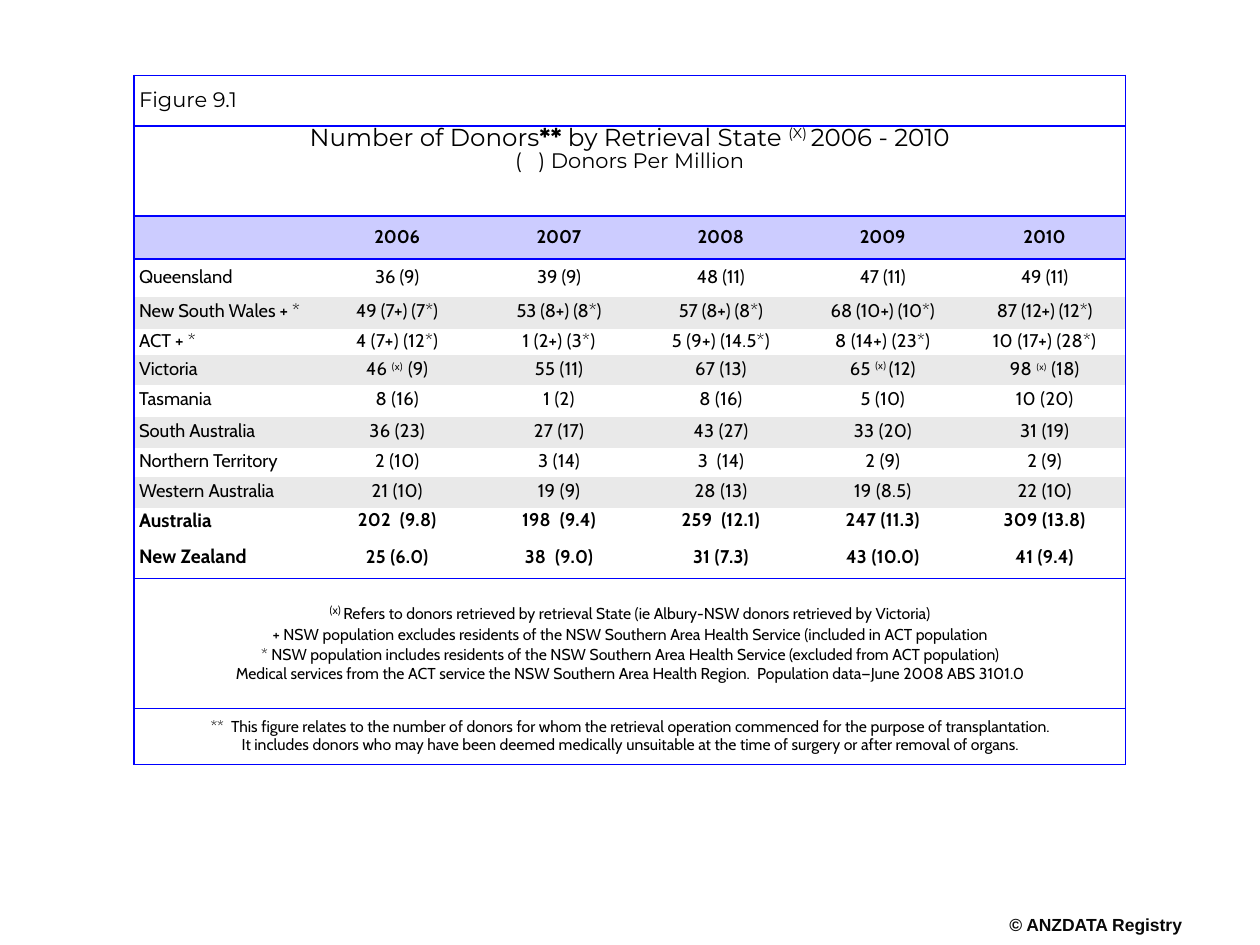
from lxml.etree import SubElement
from pptx import Presentation
from pptx.dml.color import RGBColor
from pptx.enum.text import MSO_ANCHOR, PP_ALIGN
from pptx.oxml.ns import qn
from pptx.util import Pt

COLORS = {"text": "000000", "border": "0000FF", "header": "CCCCFF",
          "band": "E9E9E9", "plain": "FFFFFF", "credit": "080808"}
NO_STYLE = "{2D5ABB26-0587-4C30-8999-92F81FD0307C}"

YEARS = ["", "2006", "2007", "2008", "2009", "2010"]
SUP = {"size": 10, "sup": True}
STATES = [
    ["Queensland", "36 (9)", "39 (9)", "48 (11)", "47 (11)", "49 (11)"],
    ["New South Wales + *", "49 (7+) (7*)", "53 (8+) (8*)", "57 (8+) (8*)",
     "68 (10+) (10*)", "87 (12+) (12*)"],
    ["ACT + *", "4 (7+) (12*)", "1 (2+) (3*)", "5 (9+) (14.5*)",
     "8 (14+) (23*)", "10 (17+) (28*)"],
    ["Victoria",
     [("46 ", {}), ("(x)", SUP), (" ", {"size": 12}), ("(9)", {})],
     "55 (11)", "67 (13)",
     [("65 ", {}), ("(x) ", SUP), ("(12)", {})],
     [("98 ", {}), ("(x)  ", {"size": 9, "sup": True}), ("(18)", {})]],
    ["Tasmania", "8 (16)", "1 (2)", "8 (16)", "5 (10)", "10 (20)"],
    ["South Australia", "36 (23)", "27 (17)", "43 (27)", "33 (20)", "31 (19)"],
    ["Northern Territory", "2 (10)", "3 (14)", "3  (14)", "2 (9)", "2 (9)"],
    ["Western Australia", "21 (10)", "19 (9)", "28 (13)", "19 (8.5)", "22 (10)"],
]
TOTALS = [
    ["Australia", "202  (9.8)", "198  (9.4)", "259  (12.1)", "247 (11.3)", "309 (13.8)"],
    ["New Zealand", "25 (6.0)", "38  (9.0)", "31 (7.3)", "43 (10.0)", "41 (9.4)"],
]
FIGURE = "Figure 9.1"
TITLE = [("Number of Donors", {}), ("**", {"bold": True}),
         (" by Retrieval State ", {}), ("(X) ", {"sup": True}), ("2006 - 2010", {})]
SUBTITLE = "(   ) Donors Per Million"
NOTES = [
    [("(x) ", {"size": 11, "sup": True}),
     ("Refers to donors retrieved by retrieval State "
      "(ie Albury-NSW donors retrieved by Victoria)", {})],
    "+ NSW population excludes residents of the NSW Southern Area Health Service "
    "(included in ACT population",
    "* NSW population includes residents of the NSW Southern Area Health Service "
    "(excluded from ACT population)",
    "Medical services from the ACT service the NSW Southern Area Health Region.  "
    "Population data—June 2008 ABS 3101.0",
]
FOOTNOTES = [
    "**  This figure relates to the number of donors for whom the retrieval operation "
    "commenced for the purpose of transplantation.",
    "It includes donors who may have been deemed medically unsuitable at the time of "
    "surgery or after removal of organs.",
]
CREDIT = "© ANZDATA Registry"

COL_WIDTHS = [104.2] + [92.5] * 5
ROW_HEIGHTS = [29, 51.5, 24.5, 21.5, 18.8, 14.8, 17, 18, 18, 16.5, 17.5, 16.5, 24, 74.5, 32]
LEFT, TOP = 76.5, 43
HEADER, FIRST_STATE, FIRST_TOTAL, NOTE, FOOTNOTE = 2, 3, 11, 13, 14
RULED_BELOW = {0, 1, HEADER, FIRST_TOTAL + 1, NOTE, FOOTNOTE}


def rgb(name):
    return RGBColor.from_string(COLORS[name])


def write(p, text, size, font="Cabin", bold=False, color="text",
          center=True, spacing=0.85, tracking=0):
    runs = [(text, {})] if isinstance(text, str) else text
    p.alignment = PP_ALIGN.CENTER if center else PP_ALIGN.LEFT
    p.line_spacing = spacing
    p.font.name, p.font.size, p.font.bold = font, Pt(size), bold
    p.font.color.rgb = rgb(color)
    for words, look in runs:
        if not words:
            continue
        r = p.add_run()
        r.text = words
        if "size" in look:
            r.font.size = Pt(look["size"])
        if "bold" in look:
            r.font.bold = look["bold"]
        rPr = r._r.get_or_add_rPr()
        if look.get("sup"):
            rPr.set("baseline", "30000")
        if tracking:
            rPr.set("spc", str(tracking))


def add_lines(cell, lines, size, gap=0):
    tf = cell.text_frame
    for i, line in enumerate(lines):
        p = tf.add_paragraph() if i else tf.paragraphs[0]
        write(p, line, size)
        if i:
            p.space_before = Pt(gap)


def set_border(cell, sides):
    tcPr = cell._tc.get_or_add_tcPr()
    for side in "LRTB":
        ln = SubElement(tcPr, qn(f"a:ln{side}"), w=str(Pt(1)))
        if side in sides:
            fill = SubElement(ln, qn("a:solidFill"))
            SubElement(fill, qn("a:srgbClr"), val=COLORS["border"])
        else:
            SubElement(ln, qn("a:noFill"))


def format_cell(cell, row, col):
    full = row < HEADER or row >= NOTE
    sides = {"L"} if col == 0 or full else set()
    if col == len(COL_WIDTHS) - 1 or full:
        sides.add("R")
    if row == 0 or row - 1 in RULED_BELOW:
        sides.add("T")
    if row in RULED_BELOW:
        sides.add("B")
    set_border(cell, sides)
    banded = FIRST_STATE <= row < FIRST_TOTAL and (row - FIRST_STATE) % 2
    cell.fill.solid()
    cell.fill.fore_color.rgb = rgb("header" if row == HEADER else "band" if banded else "plain")
    cell.margin_left = Pt(3)
    cell.margin_right = cell.margin_top = cell.margin_bottom = 0
    cell.vertical_anchor = MSO_ANCHOR.TOP if row == 1 else MSO_ANCHOR.MIDDLE
    if col or full:
        cell.margin_right = Pt(3)


prs = Presentation()
prs.slide_width, prs.slide_height = Pt(720), Pt(540)
s = prs.slides.add_slide(prs.slide_layouts[6])

frame = s.shapes.add_table(len(ROW_HEIGHTS), len(COL_WIDTHS), Pt(LEFT), Pt(TOP),
                           Pt(sum(COL_WIDTHS)), Pt(sum(ROW_HEIGHTS)))
table = frame.table
table.first_row = table.horz_banding = False
table._tbl.tblPr.find(qn("a:tableStyleId")).text = NO_STYLE
for column, width in zip(table.columns, COL_WIDTHS):
    column.width = Pt(width)
for row, height in enumerate(ROW_HEIGHTS):
    table.rows[row].height = Pt(height)
    for col in range(len(COL_WIDTHS)):
        format_cell(table.cell(row, col), row, col)
for row in (0, 1, NOTE, FOOTNOTE):
    table.cell(row, 0).merge(table.cell(row, len(COL_WIDTHS) - 1))

write(table.cell(0, 0).text_frame.paragraphs[0], FIGURE, 12, "Montserrat", center=False)
title_tf = table.cell(1, 0).text_frame
write(title_tf.paragraphs[0], TITLE, 14, "Montserrat")
write(title_tf.add_paragraph(), SUBTITLE, 12, "Montserrat")

for row, values in enumerate([YEARS] + STATES + TOTALS, HEADER):
    total = row >= FIRST_TOTAL
    spacing = 0.85 if row in (HEADER, FIRST_STATE, FIRST_TOTAL + 1) else 0.75
    for col, value in enumerate(values):
        write(table.cell(row, col).text_frame.paragraphs[0], value,
              11 if total and col == 0 else 10.5,
              bold=total or row == HEADER, center=col > 0, spacing=spacing,
              tracking=20 if col and row > FIRST_STATE + 1 else 0)

add_lines(table.cell(NOTE, 0), NOTES, 9, gap=2)
add_lines(table.cell(FOOTNOTE, 0), FOOTNOTES, 9, gap=1)

credit = s.shapes.add_textbox(Pt(575.3), Pt(524), Pt(101.5), Pt(12.2))
tf = credit.text_frame
tf.word_wrap = False
tf.margin_left = tf.margin_right = tf.margin_top = tf.margin_bottom = 0
write(tf.paragraphs[0], CREDIT, 10, "Arial", bold=True, color="credit")

prs.save("out.pptx")
